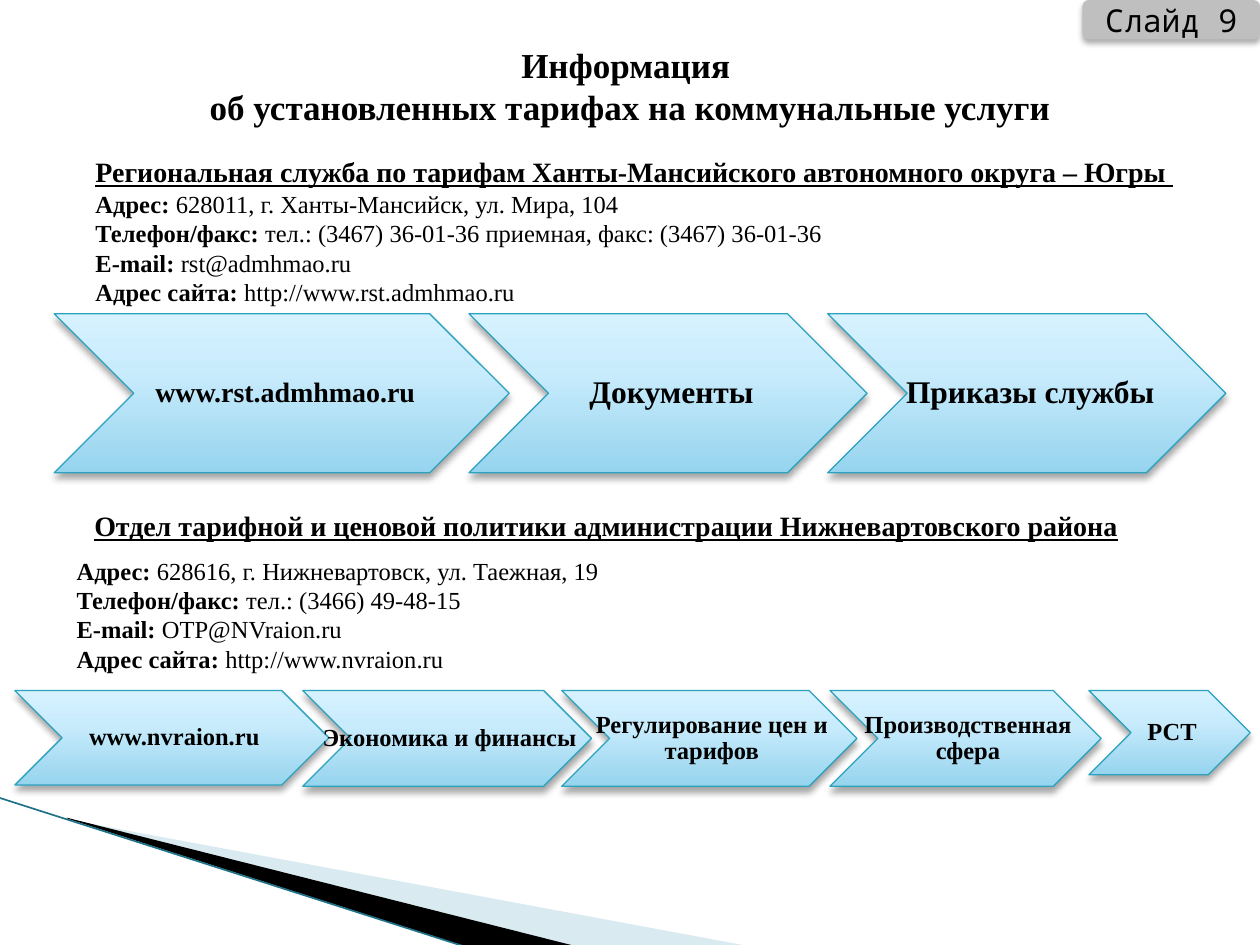
from copy import deepcopy

from lxml import etree
from pptx import Presentation
from pptx.dml.color import RGBColor
from pptx.enum.shapes import MSO_CONNECTOR, MSO_SHAPE
from pptx.enum.text import MSO_ANCHOR, PP_ALIGN
from pptx.oxml.ns import qn
from pptx.util import Pt

CHEVRON = MSO_SHAPE.CHEVRON
ROUNDED = MSO_SHAPE.ROUNDED_RECTANGLE
STRAIGHT = MSO_CONNECTOR.STRAIGHT
TOP, MIDDLE = MSO_ANCHOR.TOP, MSO_ANCHOR.MIDDLE
LEFT, CENTER = PP_ALIGN.LEFT, PP_ALIGN.CENTER

COLORS = {
    "text": "000000",
    "tag": "BFBFBF",
    "outline": "2DA2BF",
    "wedge": "000000",
    "pale_wedge": "A0CBDC",
    "edge": "1F7388",
}
GRADIENT = [(0, "96D4EE"), (0.65, "C9ECFC"), (1, "D7F2FF")]
SERIF, MONO = "Times New Roman", "Noto Sans Mono"


def rgb(name):
    return RGBColor.from_string(COLORS[name])


def style_run(r, size, bold=False, underline=False, font=SERIF):
    r.font.name = font
    r.font.size = Pt(size)
    r.font.bold = bold
    r.font.underline = underline
    r.font.color.rgb = rgb("text")


def add_shadow(s, alpha, blur, dist):
    s.shadow.inherit = False
    effects = s._element.spPr.find(qn("a:effectLst"))
    shadow = etree.SubElement(effects, qn("a:outerShdw"), blurRad=str(Pt(blur)),
                              dist=str(Pt(dist)), dir="5400000", rotWithShape="0")
    color = etree.SubElement(shadow, qn("a:srgbClr"), val="000000")
    etree.SubElement(color, qn("a:alpha"), val=str(alpha * 1000))


def add_text(sp, box, text, size, bold=True, underline=False, align=LEFT, anchor=TOP):
    tf = sp.add_textbox(*map(Pt, box)).text_frame
    tf.word_wrap = True
    tf.vertical_anchor = anchor
    tf.text = text
    for p in tf.paragraphs:
        p.alignment = align
        for r in p.runs:
            style_run(r, size, bold, underline)
    return tf


def add_contacts(sp, box, rows):
    tf = add_text(sp, box, "\n".join(label for label, _ in rows), 14)
    for p, (_, value) in zip(tf.paragraphs, rows):
        r = p.add_run()
        r.text = value
        style_run(r, 14)


def add_chevron(sp, box, text, size, inset):
    s = sp.add_shape(CHEVRON, *map(Pt, box))
    s.fill.gradient()
    s.fill.gradient_angle = 90
    stop_list = s._element.spPr.find(qn("a:gradFill")).find(qn("a:gsLst"))
    stop_list.append(deepcopy(stop_list[0]))
    for stop, (position, color) in zip(s.fill.gradient_stops, GRADIENT):
        stop.position = position
        stop.color.rgb = RGBColor.from_string(color)
    s.line.color.rgb = rgb("outline")
    s.line.width = Pt(0.75)
    add_shadow(s, 35, 4, 3)
    tf = add_text(sp, box, text, size, align=CENTER, anchor=MIDDLE)
    tf.margin_left = Pt(inset)
    tf.margin_top = tf.margin_right = tf.margin_bottom = Pt(1.5)
    tf.paragraphs[0].line_spacing = 0.9


def add_wedge(sp, points, color, alpha=100):
    start, *rest = [(Pt(x), Pt(y)) for x, y in points]
    builder = sp.build_freeform(*start)
    builder.add_line_segments(rest)
    s = builder.convert_to_shape()
    s.shadow.inherit = False
    s.fill.solid()
    s.fill.fore_color.rgb = rgb(color)
    s.line.fill.background()
    if alpha < 100:
        fill = s._element.spPr.find(qn("a:solidFill"))
        etree.SubElement(fill[0], qn("a:alpha"), val=str(alpha * 1000))


def add_edge(sp, x1, y1, x2, y2):
    s = sp.add_connector(STRAIGHT, Pt(x1), Pt(y1), Pt(x2), Pt(y2))
    s.line.color.rgb = rgb("edge")
    s.line.width = Pt(0.95)
    etree.SubElement(s._element.spPr, qn("a:effectLst"))


def add_tag(sp, box, text):
    s = sp.add_shape(ROUNDED, *map(Pt, box))
    s.fill.solid()
    s.fill.fore_color.rgb = rgb("tag")
    s.line.fill.background()
    add_shadow(s, 32, 3.5, 2.2)
    tf = s.text_frame
    tf.text = text
    tf.vertical_anchor = MIDDLE
    p = tf.paragraphs[0]
    p.alignment = CENTER
    style_run(p.runs[0], 18, font=MONO)


def main():
    prs = Presentation()
    prs.slide_width, prs.slide_height = Pt(720), Pt(540)
    sp = prs.slides.add_slide(prs.slide_layouts[6]).shapes

    add_wedge(sp, [(39.6, 468.5), (428.4, 540.7), (328.3, 540.7), (39.6, 468)],
              "pale_wedge", 40)
    add_wedge(sp, [(38.2, 467.3), (329, 540.7), (267.8, 541.4), (38.9, 468)], "wedge")
    add_edge(sp, -0.7, 455.8, 267.1, 541.4)

    service_steps = [
        (31, 260, "www.rst.admhmao.ru", 16),
        (268, 227.5, "Документы", 18),
        (473, 227.5, "Приказы службы", 18),
    ]
    for left, width, text, size in service_steps:
        add_chevron(sp, (left, 179.3, width, 90.9), text, size, 5.5)

    district_steps = [
        (8.5, 179.5, 54, "www.nvraion.ru"),
        (173, 165, 54.7, "Экономика и финансы"),
        (321, 168.7, 54.7, "Регулирование цен и тарифов"),
        (474.3, 155, 54.7, "Производственная сфера"),
        (622.2, 92.2, 48.2, "РСТ"),
    ]
    for left, width, height, text in district_steps:
        add_chevron(sp, (left, 394.6, width, height), text, 14, 4.3)

    add_text(sp, (22.3, 3.6, 675.4, 90),
             "Информация \vоб установленных тарифах на коммунальные услуги",
             20, align=CENTER, anchor=MIDDLE)
    add_tag(sp, (618.5, 0, 101.5, 22.5), "Слайд 9")

    add_contacts(sp, (47.5, 104.4, 623.5, 92), [
        ("Адрес: ", "628011, г. Ханты-Мансийск, ул. Мира, 104"),
        ("Телефон/факс: ", "тел.: (3467) 36-01-36 приемная, факс: (3467) 36-01-36"),
        ("E-mail: ", "rst@admhmao.ru"),
        ("Адрес сайта: ", "http://www.rst.admhmao.ru"),
    ])
    add_text(sp, (47.5, 85, 635.8, 26.6),
             "Региональная служба по тарифам Ханты-Мансийского автономного округа – Югры ",
             16, underline=True)
    add_text(sp, (46.8, 287.3, 635.8, 26.6),
             "Отдел тарифной и ценовой политики администрации Нижневартовского района",
             16, underline=True)
    add_contacts(sp, (36.7, 314, 623.5, 92), [
        ("Адрес: ", "628616, г. Нижневартовск, ул. Таежная, 19"),
        ("Телефон/факс: ", "тел.: (3466) 49-48-15"),
        ("E-mail: ", "OTP@NVraion.ru"),
        ("Адрес сайта: ", "http://www.nvraion.ru"),
    ])
    prs.save("out.pptx")


if __name__ == "__main__":
    main()
